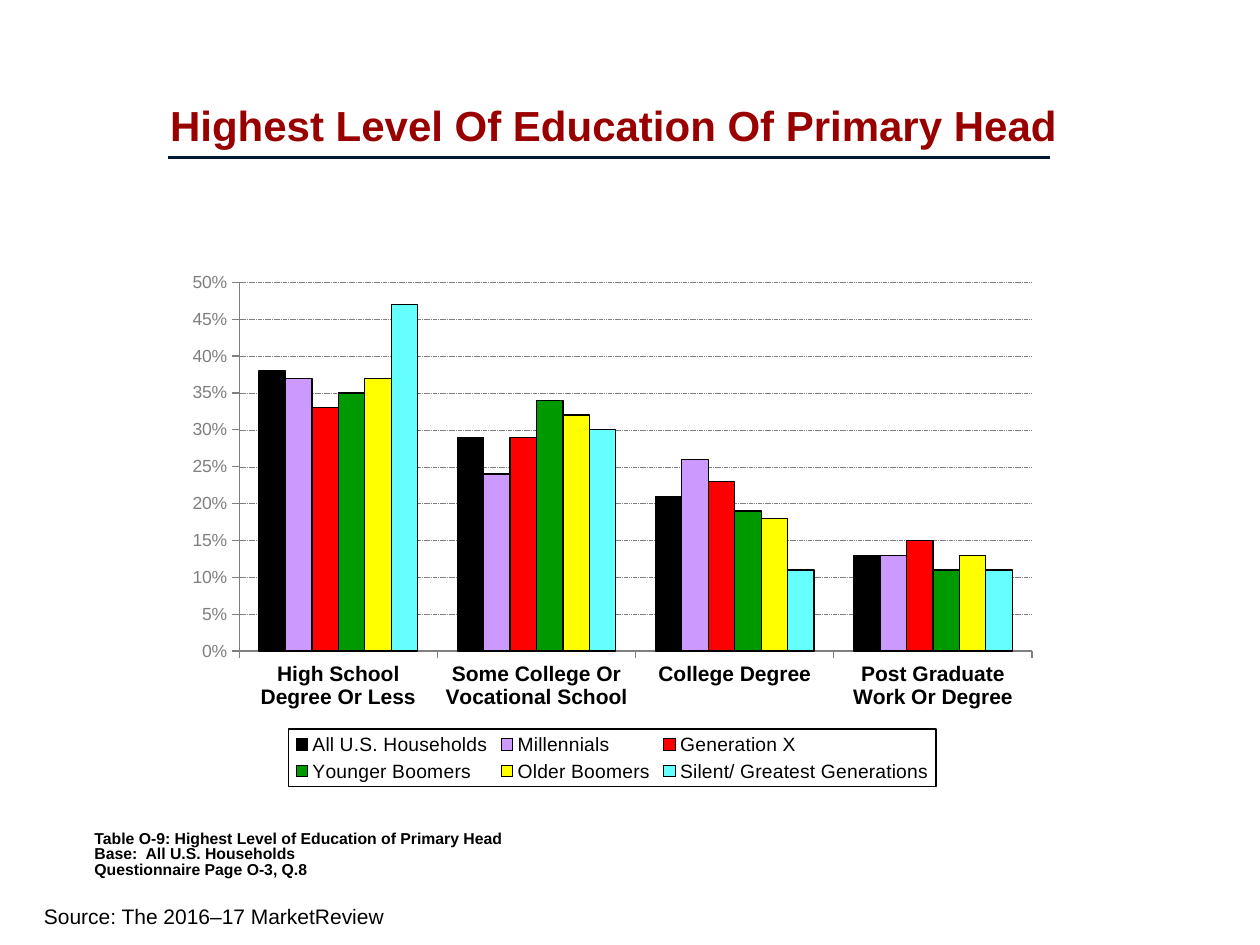
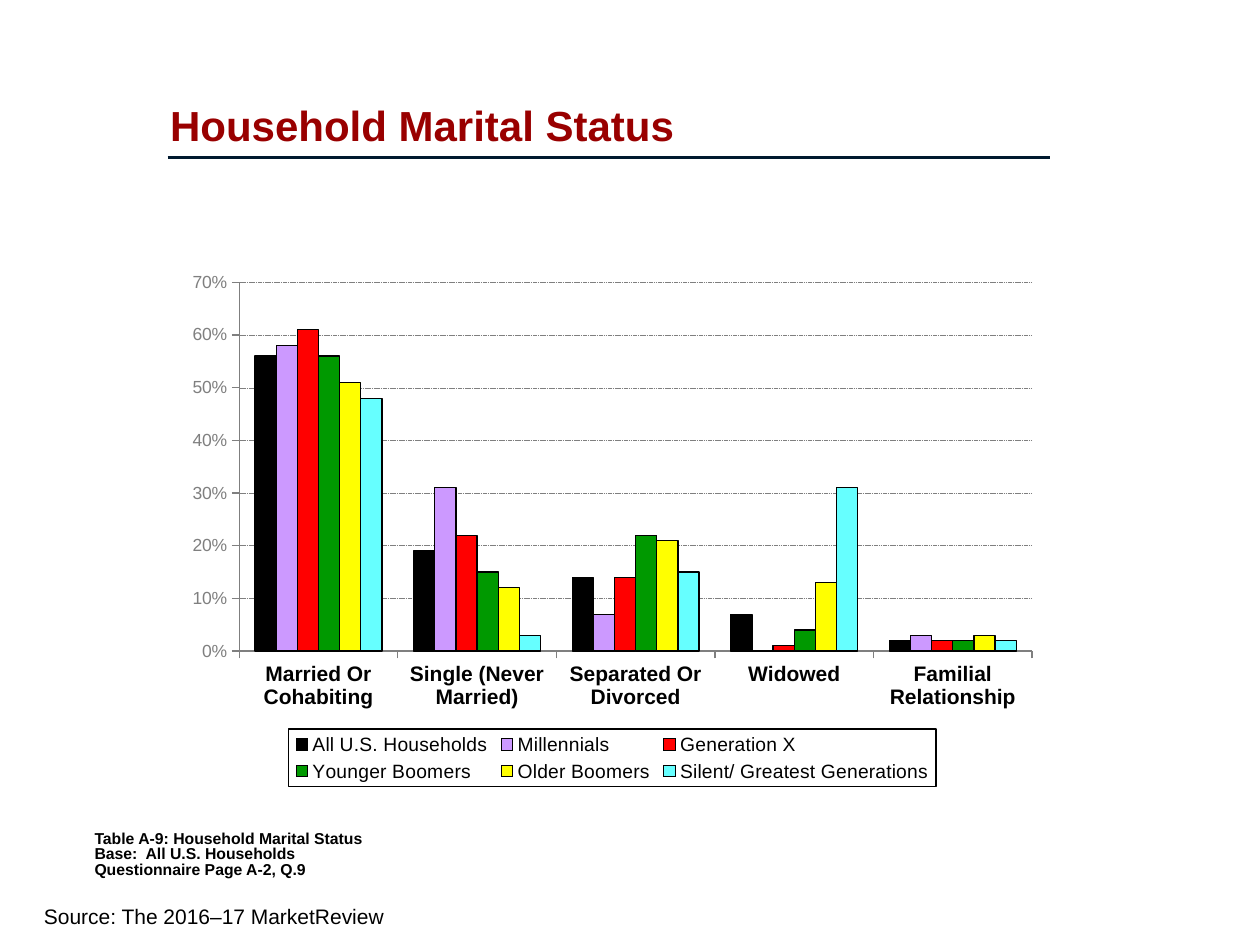
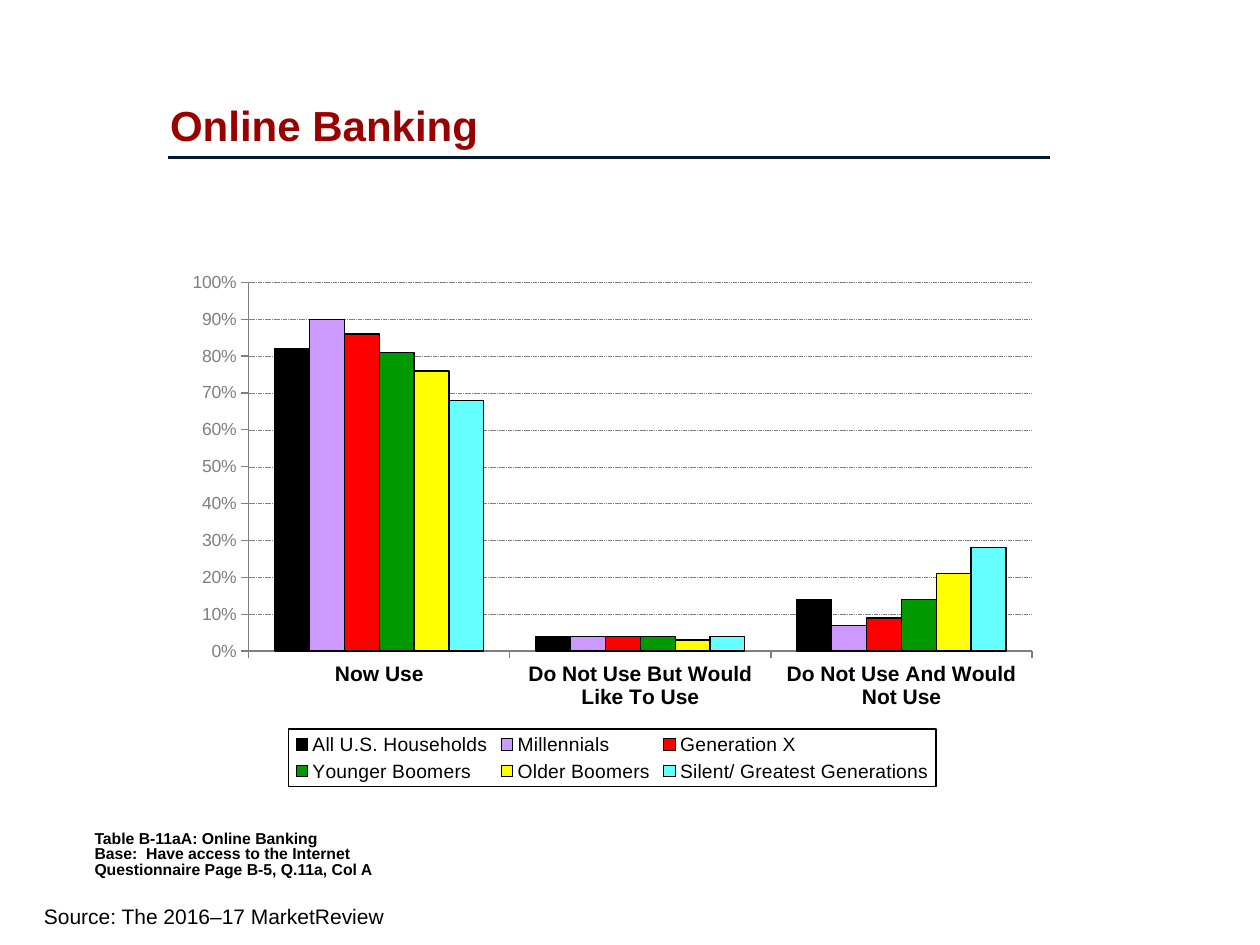
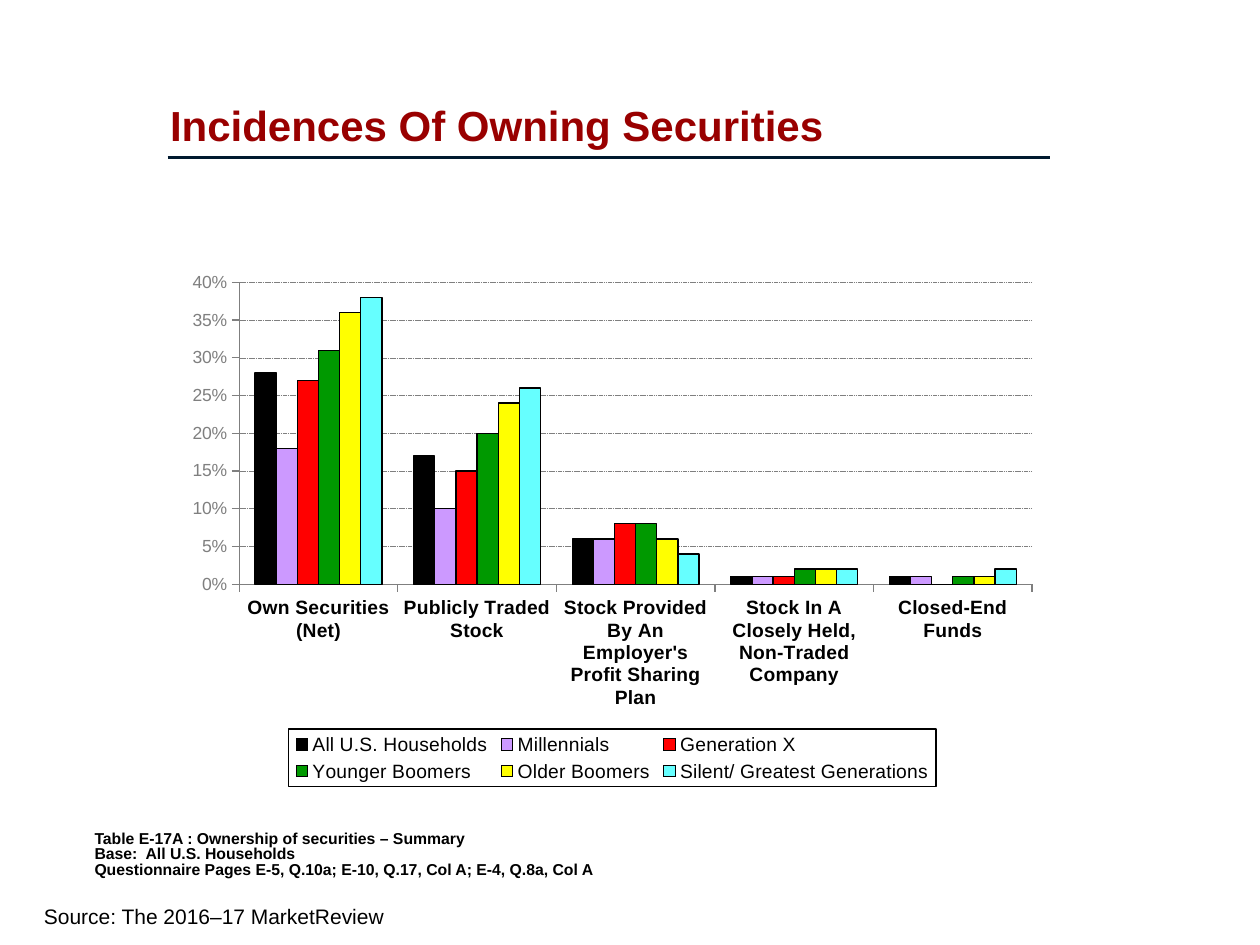
from lxml import etree
from pptx import Presentation
from pptx.chart.data import CategoryChartData
from pptx.dml.color import RGBColor
from pptx.enum.chart import XL_CHART_TYPE, XL_LEGEND_POSITION as LegendPos, XL_TICK_MARK as Tick
from pptx.enum.dml import MSO_LINE
from pptx.enum.shapes import MSO_CONNECTOR
from pptx.enum.text import MSO_ANCHOR, MSO_AUTO_SIZE, PP_ALIGN
from pptx.oxml import parse_xml
from pptx.oxml.ns import nsdecls, qn
from pptx.util import Inches, Pt

FONT = "Arial"
COLORS = {"title": "990000", "rule": "00192F", "text": "000000", "axis": "7F7F7F"}
GENERATIONS = {
    "All U.S. Households": "000000",
    "Millennials": "CC99FF",
    "Generation X": "FF0000",
    "Younger Boomers": "009900",
    "Older Boomers": "FFFF00",
    "Silent/ Greatest Generations": "66FFFF",
}
SOURCE = "Source: The 2016–17 MarketReview"
NOTE_BOTTOM = 7.1

# Each row of values holds one generation, in the order of GENERATIONS.
SLIDES = [
    dict(
        title="Highest Level Of Education Of Primary Head", title_width=7.28,
        note=["Table O-9: Highest Level of Education of Primary Head",
              "Base:  All U.S. Households",
              "Questionnaire Page O-3, Q.8"],
        note_size=(9.53, 0.85), top=0.5, step=0.05, label_size=12,
        categories=["High School Degree Or Less", "Some College Or Vocational School",
                    "College Degree", "Post Graduate Work Or Degree"],
        rows=[(0.38, 0.29, 0.21, 0.13),
              (0.37, 0.24, 0.26, 0.13),
              (0.33, 0.29, 0.23, 0.15),
              (0.35, 0.34, 0.19, 0.11),
              (0.37, 0.32, 0.18, 0.13),
              (0.47, 0.30, 0.11, 0.11)],
    ),
    dict(
        title="Household Marital Status", title_width=7.01,
        note=["Table A-9: Household Marital Status",
              "Base:  All U.S. Households",
              "Questionnaire Page A-2, Q.9"],
        note_size=(9.45, 0.8), top=0.7, step=0.1, label_size=12,
        categories=["Married Or Cohabiting", "Single (Never Married)",
                    "Separated Or Divorced", "Widowed", "Familial Relationship"],
        rows=[(0.56, 0.19, 0.14, 0.07, 0.02),
              (0.58, 0.31, 0.07, 0, 0.03),
              (0.61, 0.22, 0.14, 0.01, 0.02),
              (0.56, 0.15, 0.22, 0.04, 0.02),
              (0.51, 0.12, 0.21, 0.13, 0.03),
              (0.48, 0.03, 0.15, 0.31, 0.02)],
    ),
    dict(
        title="Online Banking", title_width=7.01,
        note=["Table B-11aA: Online Banking",
              "Base:  Have access to the Internet",
              "Questionnaire Page B-5, Q.11a, Col A"],
        note_size=(8.98, 0.75), top=1, step=0.1, label_size=12,
        categories=["Now Use", "Do Not Use But Would Like To Use",
                    "Do Not Use And Would Not Use"],
        rows=[(0.82, 0.04, 0.14),
              (0.90, 0.04, 0.07),
              (0.86, 0.04, 0.09),
              (0.81, 0.04, 0.14),
              (0.76, 0.03, 0.21),
              (0.68, 0.04, 0.28)],
    ),
    dict(
        title="Incidences Of Owning Securities", title_width=7.01,
        note=["Table E-17A : Ownership of securities – Summary",
              "Base:  All U.S. Households",
              "Questionnaire Pages E-5, Q.10a; E-10, Q.17, Col A; E-4, Q.8a, Col A"],
        note_size=(8.82, 0.75), top=0.4, step=0.05, label_size=11,
        categories=["Own Securities (Net)", "Publicly Traded Stock",
                    "Stock Provided By An Employer's Profit Sharing Plan",
                    "Stock In A Closely Held, Non-Traded Company", "Closed-End Funds"],
        rows=[(0.28, 0.17, 0.06, 0.01, 0.01),
              (0.18, 0.10, 0.06, 0.01, 0.01),
              (0.27, 0.15, 0.08, 0.01, 0),
              (0.31, 0.20, 0.08, 0.02, 0.01),
              (0.36, 0.24, 0.06, 0.02, 0.01),
              (0.38, 0.26, 0.04, 0.02, 0.02)],
    ),
]


def rgb(name):
    return RGBColor.from_string(COLORS.get(name, name))


def set_font(font, size, color="text", bold=False):
    font.name, font.size, font.bold = FONT, Pt(size), bold
    font.color.rgb = rgb(color)


def set_line(line, color, width):
    line.color.rgb = rgb(color)
    line.width = Pt(width)


def manual_layout(x, y, w, h, target=""):
    """Return a chart layout element placed by fractions of the chart."""
    target = f'<c:layoutTarget val="{target}"/>' if target else ""
    return parse_xml(
        f'<c:layout {nsdecls("c")}><c:manualLayout>{target}'
        '<c:xMode val="edge"/><c:yMode val="edge"/>'
        f'<c:x val="{x}"/><c:y val="{y}"/><c:w val="{w}"/><c:h val="{h}"/>'
        '</c:manualLayout></c:layout>')


class Deck:
    def __init__(self):
        self.prs = Presentation()
        self.prs.slide_width, self.prs.slide_height = Inches(10), Inches(7.5)
        self.s = None

    def new_slide(self):
        self.s = self.prs.slides.add_slide(self.prs.slide_layouts[5])
        self.source()
        self.rule()

    def set_text(self, sp, text, size, color="text", bold=False, spacing=None,
                 anchor=MSO_ANCHOR.TOP, insets=(0.1, 0.05, 0.1, 0.05)):
        tf = sp.text_frame
        tf.text = text
        tf.word_wrap, tf.auto_size, tf.vertical_anchor = True, MSO_AUTO_SIZE.NONE, anchor
        tf.margin_left, tf.margin_top, tf.margin_right, tf.margin_bottom = map(Inches, insets)
        p = tf.paragraphs[0]
        p.alignment, p.line_spacing = PP_ALIGN.LEFT, spacing
        for r in p.runs:
            set_font(r.font, size, color, bold)

    def textbox(self, x, y, w, h, text, size, **style):
        sp = self.s.shapes.add_textbox(*map(Inches, (x, y, w, h)))
        self.set_text(sp, text, size, **style)

    def source(self):
        self.textbox(0.25, 7.12, 8.92, 0.3, SOURCE, 12)

    def rule(self):
        line = self.s.shapes.add_connector(
            MSO_CONNECTOR.STRAIGHT, *map(Inches, (1.33, 1.25, 8.33, 1.25)))
        set_line(line.line, "rule", 2)
        etree.SubElement(line._element.spPr, qn("a:effectLst"))

    def title(self, text, width):
        sp = self.s.shapes.title
        sp.left, sp.top, sp.width, sp.height = map(Inches, (1.35, 0.53, width, 0.71))
        self.set_text(sp, text, 24, "title", True, 0.8, MSO_ANCHOR.BOTTOM, (0, 0, 0, 0.05))

    def note(self, lines, width, height):
        self.textbox(0.35, NOTE_BOTTOM - height, width, height, "\v".join(lines), 9,
                     bold=True, spacing=0.8, anchor=MSO_ANCHOR.BOTTOM,
                     insets=(0.4, 0.13, 0, 0.13))

    def chart(self, categories, rows, top, step, label_size):
        data = CategoryChartData(number_format="0%")
        data.categories = categories
        for name, values in zip(GENERATIONS, rows):
            data.add_series(name, values)
        chart = self.s.shapes.add_chart(
            XL_CHART_TYPE.COLUMN_CLUSTERED, *map(Inches, (1.39, 2.08, 6.94, 4.17)), data).chart
        chart.has_title = False
        set_font(chart.font, 10)

        plot = chart.plots[0]
        plot.gap_width, plot.overlap, plot.vary_by_categories = 150, 0, False
        for series, color in zip(plot.series, GENERATIONS.values()):
            series.format.fill.solid()
            series.format.fill.fore_color.rgb = rgb(color)
            set_line(series.format.line, "text", 0.75)
        self.axes(chart, top, step, label_size)
        self.legend(chart)

        area = chart._chartSpace.chart.plotArea
        for old in area.findall(qn("c:layout")):
            area.remove(old)
        area.insert(0, manual_layout(0.02, 0.02, 0.96, 0.83, "outer"))

    def axes(self, chart, top, step, label_size):
        cat, val = chart.category_axis, chart.value_axis
        for axis in (cat, val):
            axis.major_tick_mark, axis.minor_tick_mark = Tick.OUTSIDE, Tick.NONE
            set_line(axis.format.line, "axis", 0.75)
        set_font(cat.tick_labels.font, label_size, bold=True)
        set_font(val.tick_labels.font, 10, "axis")
        val.minimum_scale, val.maximum_scale, val.major_unit = 0, top, step
        val.tick_labels.number_format = "0%"
        val.tick_labels.number_format_is_linked = False
        val.has_major_gridlines = True
        grid = val.major_gridlines.format.line
        set_line(grid, "axis", 0.25)
        grid.dash_style = MSO_LINE.SQUARE_DOT

    def legend(self, chart):
        chart.has_legend = True
        legend = chart.legend
        legend.position, legend.include_in_layout = LegendPos.BOTTOM, False
        set_font(legend.font, 11)
        el = legend._element
        el.find(qn("c:legendPos")).addnext(manual_layout(0.13, 0.89, 0.74, 0.11))
        el.find(qn("c:overlay")).addnext(parse_xml(
            f'<c:spPr {nsdecls("c", "a")}><a:ln w="{Pt(0.75)}"><a:solidFill>'
            f'<a:srgbClr val="{COLORS["text"]}"/></a:solidFill></a:ln></c:spPr>'))


def main():
    deck = Deck()
    for page in SLIDES:
        deck.new_slide()
        deck.title(page["title"], page["title_width"])
        deck.chart(page["categories"], page["rows"], page["top"], page["step"],
                   page["label_size"])
        deck.note(page["note"], *page["note_size"])
    deck.prs.save("out.pptx")


if __name__ == "__main__":
    main()
